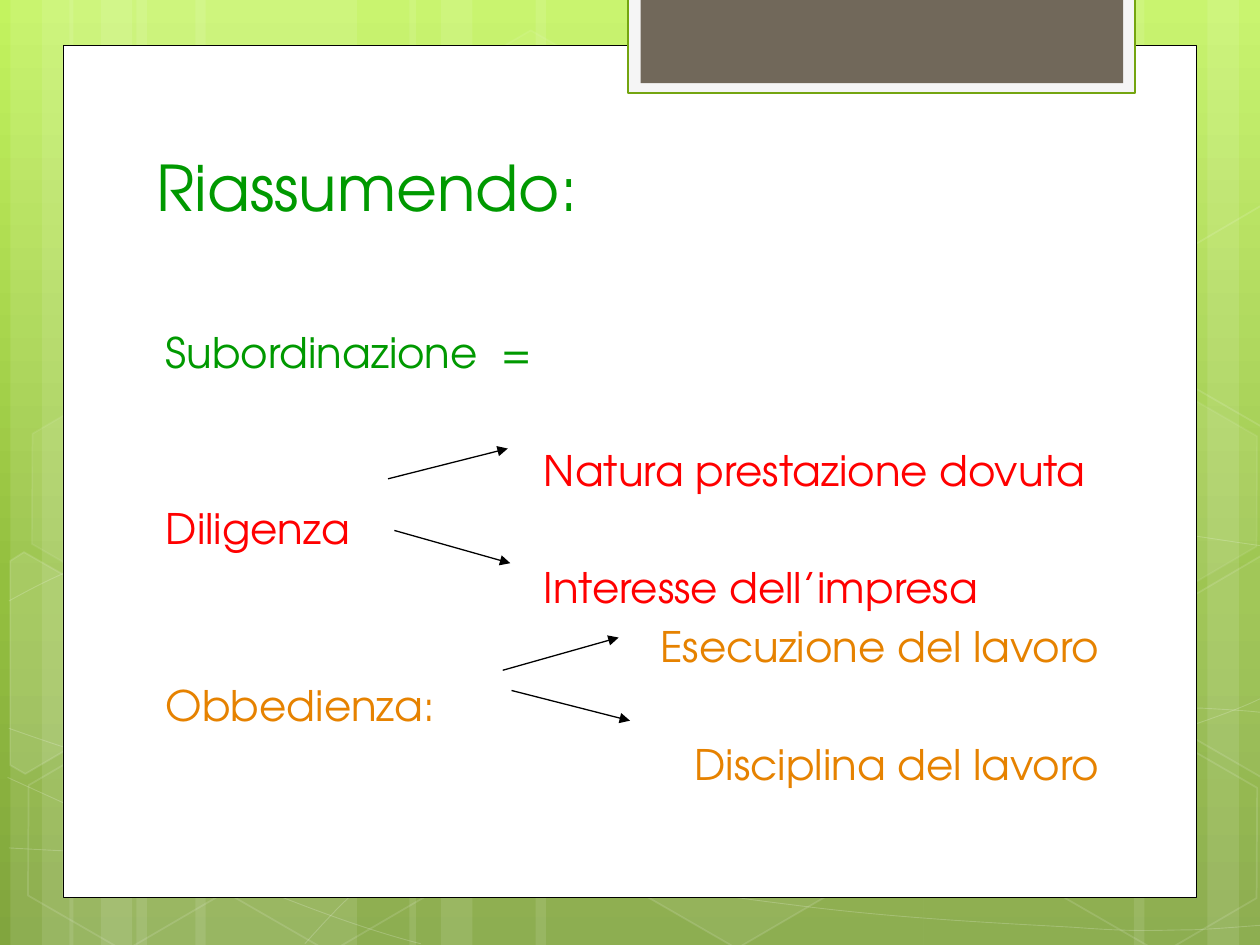
"""Build the summary slide on subordination, diligence and obedience."""
from copy import deepcopy
from math import cos, radians, sin
from pptx import Presentation, util as u
from pptx.dml.color import RGBColor
from pptx.enum import shapes as sh, text as tx
from pptx.oxml.ns import qn
from lxml import etree

HUE = {"white": "FFFFFF", "black": "000000", "pale": "F5F5F5", "edge": "74A510",
       "taupe": "71685A", "green": "009900", "red": "FF0000", "amber": "E68200",
       "top": "C3F35F", "mid": "93BF3F", "low": "81A53E"}
FONT = "TeX Gyre Adventor"
RGB = {k: RGBColor.from_string(v) for k, v in HUE.items()}
RECT, HEX = sh.MSO_SHAPE.RECTANGLE, sh.MSO_SHAPE.HEXAGON

deck = Presentation()
deck.slide_width, deck.slide_height = u.Inches(10), u.Inches(7.5)
CELL = deck.slide_width // 100
page = deck.slides.add_slide(deck.slide_layouts[6])
art = page.shapes


def grid(*cells):
    return [u.Emu(round(c * CELL)) for c in cells]


def paint(shape, fill=None, clear=None, line=None, wide=1, faint=None):
    shape.shadow.inherit = False
    for part, hue, alpha in ((shape.fill, fill, clear), (shape.line.fill, line, faint)):
        if not hue:
            part.background()
            continue
        part.solid()
        part.fore_color.rgb = RGB[hue]
        if alpha:
            tag = "a:solidFill" if part is shape.fill else "a:ln/a:solidFill"
            node = shape._element.spPr.find("/".join(map(qn, tag.split("/"))))
            etree.SubElement(node[0], qn("a:alpha")).set("val", str(alpha * 1000))
    if line:
        shape.line.width = u.Pt(wide)


back = page.background.fill
back.gradient()
back.gradient_angle = 270
stop = list(page._element.iter(qn("a:gs")))[-1]
stop.addnext(deepcopy(stop))
for mark, hue, pos in zip(back.gradient_stops, ("top", "mid", "low"), (0, 0.62, 1)):
    mark.color.rgb, mark.position = RGB[hue], pos

for left, wide in ((10.83, 17.5), (0.83, 5), (3.33, 8.33), (15.5, 17.5), (5.5, 5), (8, 8.33),
                   (73.33, 17.5), (95.83, 4.17), (90, 8.33), (42.5, 30.83), (32.5, 5), (35, 8.33)):
    paint(art.add_shape(RECT, *grid(left, 0, wide, 75)), "white", 10)

curves = (
    ((0.7, 67.3), (6.1, 67.6), (11.5, 67.9), (19, 67.8), (26.5, 67.7), (35.8, 67.5), (45.8, 66.5),
     (55.8, 65.5), (70, 63.6), (79.2, 61.7), (88.3, 59.8), (97.7, 56.8), (100.7, 55.1)),
    ((0.7, 47.7), (3.6, 46.1), (6.5, 44.6), (12.1, 43.1), (17.8, 41.6), (25.9, 39.4), (34.7, 38.7),
     (43.6, 38), (54.4, 37.9), (65.4, 38.7), (76.4, 39.5), (94.7, 42.6), (100.7, 43.4)),
    ((0.6, 61.7), (12.7, 67.2), (24.7, 72.7), (33.4, 74.9)),
    ((0.7, 57.8), (3.8, 58.9), (7, 60), (12.8, 61.6), (18.6, 63.1), (27.3, 65.6), (35.7, 67.3),
     (44, 69), (54.5, 70.8), (62.8, 71.8), (71.1, 72.9), (80, 73.3), (85.3, 73.6),
     (90.5, 74), (91.9, 73.8), (94.5, 73.8), (97.1, 73.7), (98.9, 73.5), (100.7, 73.4)),
    ((24.2, 74.9), (26, 72.9), (27.8, 70.9), (30.2, 69.1), (32.6, 67.3), (36, 65.3), (38.8, 63.9),
     (41.6, 62.5), (43.3, 61.9), (47, 60.9), (50.6, 59.9), (57.3, 58.5), (60.8, 57.8),
     (64.4, 57.1), (64.9, 57.1), (68, 56.9), (71.1, 56.6), (76, 56.3), (79.4, 56.2),
     (82.9, 56.1), (88.6, 56.2), (88.6, 56.2), (90.8, 56.2), (93.1, 56.2), (95.3, 56.2),
     (97.1, 56.3), (98.8, 56.4), (99.7, 56.5), (100.6, 56.6), (100.3, 56.5), (100.6, 56.6)))
for knots in curves:
    dots = [grid(*k) for k in knots]
    pen = art.build_freeform(*dots[0])
    pen.add_line_segments(dots[1:], close=False)
    wave = pen.convert_to_shape()
    legs = list(wave._element.iter(qn("a:lnTo")))
    for i in range(0, len(legs), 3):
        bend = etree.Element(qn("a:cubicBezTo"))
        legs[i].addprevious(bend)
        for leg in legs[i:i + 3]:
            bend.append(leg[0])
            leg.getparent().remove(leg)
    paint(wave, line="white", wide=0.5, faint=20)

for left, top, clear, faint in ((33.4, 3.6, 4, 8), (49.7, 58.9, 6, 12), (1.1, 59.1, 0, 12),
                                (1.4, 31.2, 7, 8), (17.4, 59.2, 0, 12), (83.4, 59.3, 0, 12),
                                (83.4, 31.4, 7, 8)):
    cell = art.add_shape(HEX, *grid(left, top, 17.5, 15.2))
    cell.rotation, cell.adjustments[0] = 30, 0.285
    paint(cell, "white" if clear else None, clear, "white", 1, faint)

TURN = radians(30)
for mx, my, clear, dots in (
        (3.6, 53.5, 10, ((0.8, 44.5), (1.9, 43.8), (9.6, 48.2), (9.5, 57), (2, 61.4), (0.8, 60.7))),
        (98.5, 52, 4, ((92.6, 48.5), (100.1, 44.1), (100.9, 44.6), (100.9, 61.3), (100.2, 61.7),
                       (92.6, 57.3))),
        (98.5, 24.1, 0, ((92.6, 20.7), (100.1, 16.3), (101, 16.8), (100.9, 33.5), (100.2, 33.9),
                         (92.6, 29.5)))):
    flat = [grid(mx + (x - mx) * cos(TURN) + (y - my) * sin(TURN),
                 my - (x - mx) * sin(TURN) + (y - my) * cos(TURN)) for x, y in dots]
    pen = art.build_freeform(*flat[0])
    pen.add_line_segments(flat[1:])
    chip = pen.convert_to_shape()
    chip.rotation = 30
    paint(chip, "white" if clear else None, clear, "white", 1, 12)

for spot, fill, line, wide in (((5, 3.6, 90, 67.65), "white", "black", 0.5),
                               ((49.85, -0.2, 40.2, 7.6), "pale", "edge", 1.25),
                               ((50.85, -0.2, 38.3, 6.8), "taupe", None, 0)):
    paint(art.add_shape(RECT, *grid(*spot)), fill, line=line, wide=wide)

LEFT, RIGHT = tx.PP_ALIGN.LEFT, tx.PP_ALIGN.RIGHT
title = (("Riassumendo:", "green", 0, 0, LEFT),)
body = (("Subordinazione  =", "green", 0.75, 4.8, LEFT),
        ("Natura prestazione dovuta", "red", 30.75, 38.4, LEFT),
        ("Diligenza", "red", 0.75, 4.8, LEFT),
        ("Interesse dell’impresa", "red", 30.75, 4.8, LEFT),
        ("Esecuzione del lavoro", "amber", 0.75, 4.8, RIGHT),
        ("Obbedienza:", "amber", 0.75, 4.8, LEFT),
        ("Disciplina del lavoro", "amber", 0.75, 4.8, RIGHT))
for spot, size, hold, rows in (((11.42, 11.2, 76.8, 7.1), 36, tx.MSO_ANCHOR.BOTTOM, title),
                               ((11.42, 25.43, 76.8, 38.4), 24, tx.MSO_ANCHOR.TOP, body)):
    frame = art.add_textbox(*grid(*spot)).text_frame
    frame.word_wrap, frame.vertical_anchor = True, hold
    for i, (words, hue, dent, gap, side) in enumerate(rows):
        para = frame.add_paragraph() if i else frame.paragraphs[0]
        para.alignment, para.space_before = side, u.Pt(gap)
        para._p.get_or_add_pPr().set("marL", str(grid(dent)[0]))
        run = para.add_run()
        run.text = words
        for key, val in {"name": FONT, "size": u.Pt(size)}.items():
            setattr(run.font, key, val)
        run.font.color.rgb = RGB[hue]

for ends in ((31.3, 42.1, 40.5, 44.7), (30.8, 38, 40.3, 35.6),
             (39.9, 53.2, 49.1, 50.6), (40.6, 54.8, 50, 57.2)):
    ray = art.add_connector(sh.MSO_CONNECTOR.STRAIGHT, *grid(*ends))
    ray.line.color.rgb, ray.line.width = RGB["black"], u.Pt(0.75)
    etree.SubElement(ray.line._get_or_add_ln(), qn("a:tailEnd")).set("type", "triangle")
    etree.SubElement(ray._element.spPr, qn("a:effectLst"))

deck.save("out.pptx")
